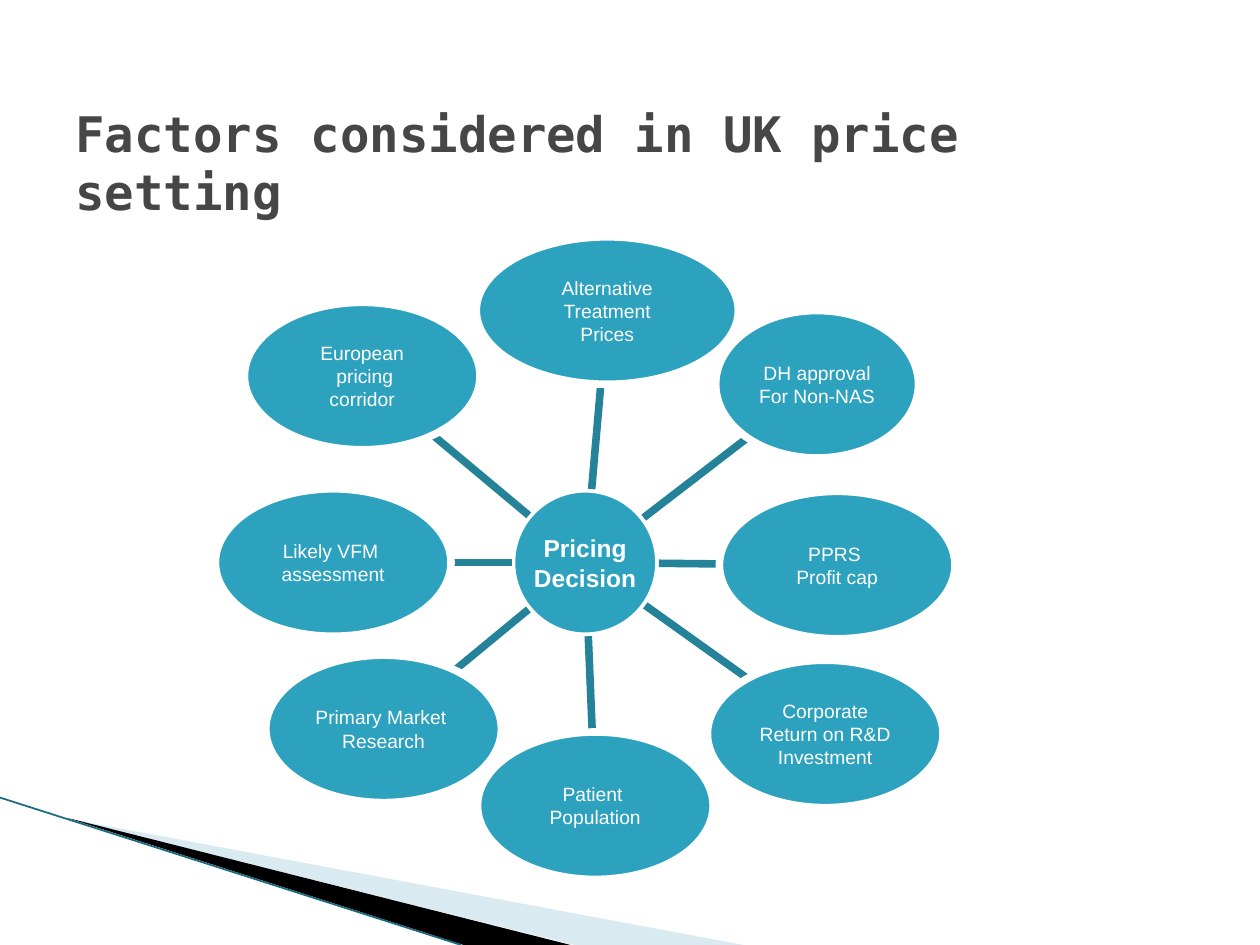
from dataclasses import dataclass
from math import hypot

from lxml import etree
from pptx import Presentation
from pptx.dml.color import RGBColor
from pptx.enum.shapes import MSO_CONNECTOR, MSO_SHAPE
from pptx.enum.text import MSO_ANCHOR, PP_ALIGN
from pptx.oxml.ns import qn
from pptx.util import Inches, Pt

ELLIPSE = MSO_SHAPE.OVAL
STRAIGHT = MSO_CONNECTOR.STRAIGHT
MIDDLE = MSO_ANCHOR.MIDDLE
CENTER = PP_ALIGN.CENTER

# The slide is a grid of 100 columns by 75 rows
COLUMNS, ROWS = 100, 75
CELL = Inches(0.1)


@dataclass(frozen=True)
class Theme:
    bubble: str = "2DA2BF"
    spoke: str = "248299"
    white: str = "FFFFFF"
    title: str = "464646"
    pale_wedge: str = "A0CBDC"
    dark_wedge: str = "000000"
    edge: str = "1B6B80"
    title_font: str = "DejaVu Sans Mono"
    body_font: str = "Arial"
    title_size: float = 28
    hub_size: float = 14
    factor_size: float = 11
    outline: float = 4.33
    edge_width: float = 1


THEME = Theme()


@dataclass(frozen=True)
class Bubble:
    """An ellipse with its centre and width in grid cells."""
    lines: tuple[str, ...]
    x: float
    y: float
    width: float = 18.7
    height: float = 11.7

    def rim_share(self, dx: float, dy: float) -> float:
        """Share of the vector (dx, dy) that lies inside the ellipse."""
        return 1 / hypot(2 * dx / self.width, 2 * dy / self.height)


HUB = Bubble(("Pricing", "Decision"), 46.45, 44.65, width=11.7)
FACTORS = (
    Bubble(("Alternative", "Treatment", "Prices"), 48.2, 24.65, width=20.8),
    Bubble(("DH approval", "For Non-NAS"), 64.85, 30.5, width=16.1),
    Bubble(("PPRS ", "Profit cap"), 66.45, 44.85),
    Bubble(("Corporate", "Return on R&D", "Investment"), 65.5, 58.25),
    Bubble(("Patient ", "Population"), 47.25, 63.95),
    Bubble(("Primary Market ", "Research"), 30.45, 57.85),
    Bubble(("Likely VFM ", "assessment"), 26.45, 44.65),
    Bubble(("European", " pricing", "corridor"), 28.75, 29.85),
)


def cells(count: float) -> int:
    return round(count * CELL)


def color(value: str) -> RGBColor:
    return RGBColor.from_string(value)


def add_run(paragraph, words: str, font_name: str, size: float, ink: str, bold: bool) -> None:
    run = paragraph.add_run()
    run.text = words
    run.font.name = font_name
    run.font.size = Pt(size)
    run.font.bold = bold
    run.font.color.rgb = color(ink)


def add_wedge(slide, points: list[tuple[float, float]], fill: str, opacity: int = 100) -> None:
    builder = slide.shapes.build_freeform(*map(cells, points[0]), scale=1.0)
    builder.add_line_segments([tuple(map(cells, point)) for point in points[1:]])
    wedge = builder.convert_to_shape()
    wedge.shadow.inherit = False
    wedge.fill.solid()
    wedge.fill.fore_color.rgb = color(fill)
    wedge.line.fill.background()
    if opacity < 100:
        ink = wedge._element.spPr.find(".//" + qn("a:srgbClr"))
        etree.SubElement(ink, qn("a:alpha")).set("val", str(opacity * 1000))


def add_line(slide, start: tuple[float, float], end: tuple[float, float],
             ink: str, width: float) -> None:
    line = slide.shapes.add_connector(STRAIGHT, *map(cells, start + end))
    line.line.color.rgb = color(ink)
    line.line.width = Pt(width)
    etree.SubElement(line._element.spPr, qn("a:effectLst"))


def add_spoke(slide, hub: Bubble, factor: Bubble) -> None:
    """Join the rims of two bubbles along the line between their centres."""
    dx, dy = factor.x - hub.x, factor.y - hub.y
    near, far = hub.rim_share(dx, dy), factor.rim_share(dx, dy)
    add_line(slide, (hub.x + near * dx, hub.y + near * dy),
             (factor.x - far * dx, factor.y - far * dy), THEME.spoke, THEME.outline)


def add_bubble(slide, bubble: Bubble, size: float, bold: bool = False) -> None:
    ellipse = slide.shapes.add_shape(
        ELLIPSE, cells(bubble.x - bubble.width / 2), cells(bubble.y - bubble.height / 2),
        cells(bubble.width), cells(bubble.height))
    ellipse.shadow.inherit = False
    ellipse.fill.solid()
    ellipse.fill.fore_color.rgb = color(THEME.bubble)
    ellipse.line.color.rgb = color(THEME.white)
    ellipse.line.width = Pt(THEME.outline)
    frame = ellipse.text_frame
    frame.word_wrap = False
    frame.vertical_anchor = MIDDLE
    frame.margin_left = frame.margin_right = frame.margin_top = frame.margin_bottom = cells(0.1)
    for index, words in enumerate(bubble.lines):
        paragraph = frame.add_paragraph() if index else frame.paragraphs[0]
        paragraph.alignment = CENTER
        add_run(paragraph, words, THEME.body_font, size, THEME.white, bold)


def add_title(slide, words: str) -> None:
    frame = slide.shapes.add_textbox(cells(5), cells(6.6), cells(85), cells(12.5)).text_frame
    frame.word_wrap = True
    frame.vertical_anchor = MIDDLE
    add_run(frame.paragraphs[0], words, THEME.title_font, THEME.title_size, THEME.title, True)


def main() -> None:
    deck = Presentation()
    deck.slide_width, deck.slide_height = cells(COLUMNS), cells(ROWS)
    slide = deck.slides.add_slide(deck.slide_layouts[6])

    # Corner decoration
    add_wedge(slide, [(5.5, 65), (59, ROWS), (45.6, ROWS)], THEME.pale_wedge, opacity=40)
    add_wedge(slide, [(5.3, 64.9), (45.3, ROWS), (36.8, ROWS)], THEME.dark_wedge)
    add_line(slide, (0, 63.3), (36.6, ROWS), THEME.edge, THEME.edge_width)

    add_title(slide, "Factors considered in UK price setting")

    # Hub and its factors
    add_bubble(slide, HUB, THEME.hub_size, bold=True)
    for factor in FACTORS:
        add_spoke(slide, HUB, factor)
        add_bubble(slide, factor, THEME.factor_size)

    deck.save("out.pptx")


if __name__ == "__main__":
    main()
